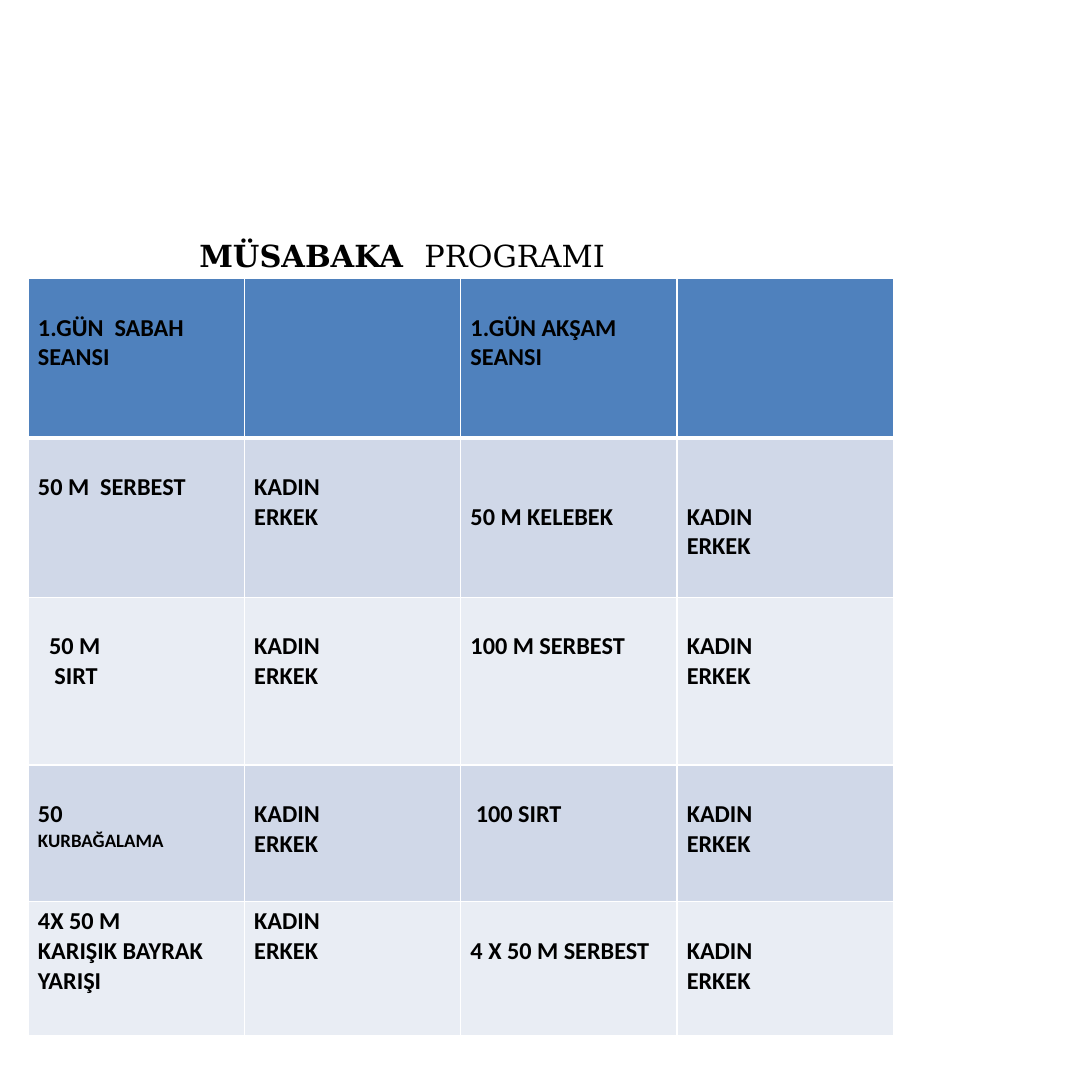
"""Build the swimming competition programme slide."""
from dataclasses import dataclass

from lxml import etree
from pptx import Presentation
from pptx.dml.color import RGBColor
from pptx.enum.text import MSO_ANCHOR, MSO_AUTO_SIZE, PP_ALIGN
from pptx.oxml.ns import qn
from pptx.util import Cm, Pt

TOP = MSO_ANCHOR.TOP
CENTER = PP_ALIGN.CENTER
NO_AUTOFIT = MSO_AUTO_SIZE.NONE
TITLE_ONLY = 5


@dataclass(frozen=True)
class Theme:
    title_font: str = "DejaVu Serif"
    body_font: str = "Calibri"
    text: str = "000000"
    header: str = "4F81BD"
    bands: tuple = ("E9EDF4", "D0D8E8")
    border: str = "FFFFFF"
    title_size: float = 22.6
    title_leading: float = 31.6
    body_size: int = 18
    small_size: int = 14
    thin: int = 1
    thick: int = 3


@dataclass(frozen=True)
class Line:
    text: str
    indent: float = 0
    size: int = Theme.body_size


@dataclass(frozen=True)
class Session:
    event: tuple
    lead: int = 1


THEME = Theme()
COLUMN_WIDTH = Cm(5.66)
ROW_HEIGHTS = [Cm(height) for height in (4.17, 4.17, 4.39, 3.58, 3.51)]
CELL_MARGIN = Cm(0.13)
LINE_HEIGHT = Cm(0.775)
CATEGORIES = (Line("KADIN"), Line("ERKEK"))
HEADERS = ("1.GÜN  SABAH SEANSI", "1.GÜN AKŞAM SEANSI")
PROGRAMME = [
    (Session((Line("50 M  SERBEST"),)), Session((Line("50 M KELEBEK"),), lead=2)),
    (Session((Line("50 M", 0.29), Line("SIRT", 0.43))), Session((Line("100 M SERBEST"),))),
    (Session((Line("50"), Line("KURBAĞALAMA", size=THEME.small_size))),
     Session((Line("100 SIRT", 0.14),))),
    (Session((Line("4X 50 M"), Line("KARIŞIK BAYRAK YARIŞI")), lead=0),
     Session((Line("4 X 50 M SERBEST"),))),
]


def format_run(run, font, size, bold=True):
    run.font.name = font
    run.font.size = Pt(size)
    run.font.bold = bold
    run.font.color.rgb = RGBColor.from_string(THEME.text)


def set_title(slide):
    title = slide.shapes.title
    title.left, title.top, title.width, title.height = Cm(3.07), Cm(6.05), Cm(14.91), Cm(1.04)
    frame = title.text_frame
    frame.auto_size = NO_AUTOFIT
    frame.vertical_anchor = TOP
    frame.margin_left = frame.margin_right = frame.margin_top = frame.margin_bottom = 0
    paragraph = frame.paragraphs[0]
    paragraph.alignment = CENTER
    paragraph.line_spacing = Pt(THEME.title_leading)
    for text, bold in (("MÜSABAKA  ", True), ("PROGRAMI", False)):
        run = paragraph.add_run()
        run.text = text
        format_run(run, THEME.title_font, THEME.title_size, bold)


def set_borders(cell, top, bottom):
    properties = cell._tc.get_or_add_tcPr()
    widths = {"a:lnL": THEME.thin, "a:lnR": THEME.thin, "a:lnT": top, "a:lnB": bottom}
    for side, width in widths.items():
        border = etree.SubElement(properties, qn(side), w=str(Pt(width)))
        fill = etree.SubElement(border, qn("a:solidFill"))
        etree.SubElement(fill, qn("a:srgbClr"), val=THEME.border)


def style_cell(cell, row):
    set_borders(cell,
                top=THEME.thick if row == 1 else THEME.thin,
                bottom=THEME.thick if row == 0 else THEME.thin)
    cell.fill.solid()
    color = THEME.bands[row % 2] if row else THEME.header
    cell.fill.fore_color.rgb = RGBColor.from_string(color)


def write_cell(cell, lines, lead):
    cell.margin_top = CELL_MARGIN + lead * LINE_HEIGHT
    frame = cell.text_frame
    frame.text = "\n".join(line.text for line in lines)
    for paragraph, line in zip(frame.paragraphs, lines):
        if line.indent:
            paragraph._p.get_or_add_pPr().set("marL", str(Cm(line.indent)))
        format_run(paragraph.runs[0], THEME.body_font, line.size)


def add_programme(slide):
    columns = 2 * len(HEADERS)
    table = slide.shapes.add_table(len(ROW_HEIGHTS), columns, Cm(0.74), Cm(7.29),
                                   columns * COLUMN_WIDTH, sum(ROW_HEIGHTS)).table
    for column in table.columns:
        column.width = COLUMN_WIDTH
    for row, height in enumerate(ROW_HEIGHTS):
        table.rows[row].height = height
        for column in range(columns):
            style_cell(table.cell(row, column), row)
    for index, header in enumerate(HEADERS):
        write_cell(table.cell(0, 2 * index), (Line(header),), lead=1)
    for row, sessions in enumerate(PROGRAMME, start=1):
        for index, session in enumerate(sessions):
            write_cell(table.cell(row, 2 * index), session.event, session.lead)
            write_cell(table.cell(row, 2 * index + 1), CATEGORIES, session.lead)


def main():
    presentation = Presentation()
    presentation.slide_width = presentation.slide_height = Cm(28.58)
    slide = presentation.slides.add_slide(presentation.slide_layouts[TITLE_ONLY])
    set_title(slide)
    add_programme(slide)
    presentation.save("out.pptx")


if __name__ == "__main__":
    main()
